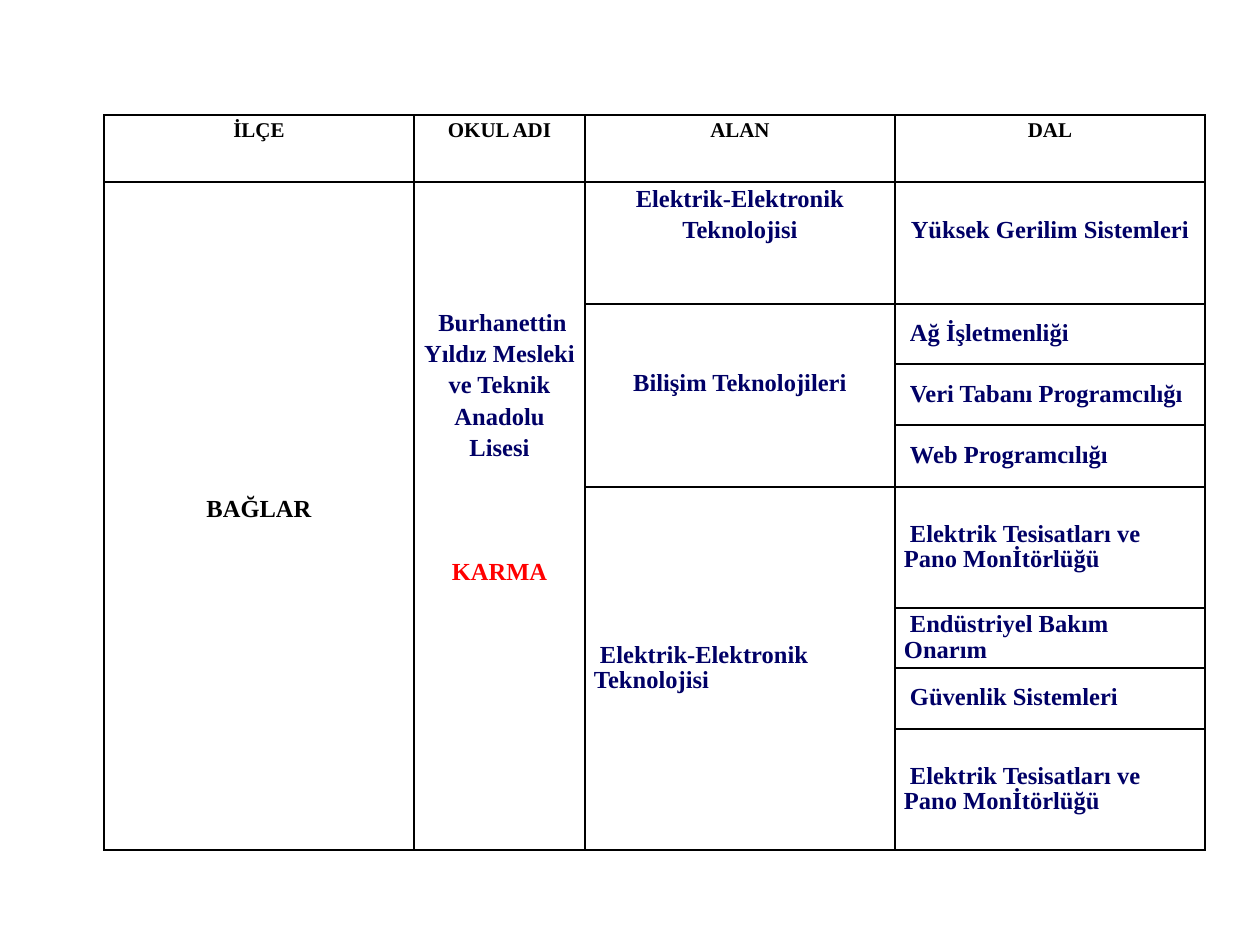
from dataclasses import dataclass

from lxml.etree import SubElement
from pptx import Presentation
from pptx.dml.color import RGBColor as RGB
from pptx.enum.text import MSO_ANCHOR as Anchor, PP_ALIGN as Align
from pptx.oxml import parse_xml
from pptx.oxml.ns import nsdecls, qn
from pptx.util import Pt

PX = 914400 / 126


def px(n):
    return round(n * PX)


@dataclass(frozen=True)
class Theme:
    font: str = "Times New Roman"
    black: str = "000000"
    navy: str = "000066"
    red: str = "FF0000"
    head_size: int = 12
    body_size: int = 14
    loose: float = 1.15
    tight: float = 14.7
    border: float = 1
    inset: int = 9
    line: int = 31
    indent: int = 6


class Deck:
    def __init__(self, theme):
        self.theme = theme
        self.prs = Presentation()
        self.prs.slide_width, self.prs.slide_height = px(1260), px(945)
        self.s = self.prs.slides.add_slide(self.prs.slide_layouts[6])

    def table(self, left, top, cols, rows):
        frame = self.s.shapes.add_table(
            len(rows), len(cols), px(left), px(top), px(sum(cols)), px(sum(rows)))
        tbl = frame.table
        tbl.first_row = tbl.horz_banding = False
        for col, w in zip(tbl.columns, cols):
            col.width = px(w)
        for row, h in zip(tbl.rows, rows):
            row.height = px(h)
        for cell in tbl.iter_cells():
            cell.fill.background()
            self.borders(cell)
        return tbl

    def borders(self, cell):
        tcPr = cell._tc.get_or_add_tcPr()
        for i, side in enumerate(("lnL", "lnR", "lnT", "lnB")):
            ln = parse_xml(f'<a:{side} {nsdecls("a")} w="{Pt(self.theme.border)}"/>')
            fill = SubElement(ln, qn("a:solidFill"))
            SubElement(fill, qn("a:srgbClr"), val=self.theme.black)
            tcPr.insert(i, ln)

    def centred(self, cell, text, color, size=None, skip=0):
        """Centre text from the top of the cell, skip lines down."""
        t = self.theme
        self.insets(cell, skip * t.line)
        cell.text_frame.text = text
        p = cell.text_frame.paragraphs[0]
        self.paragraph(p, color, size or t.body_size, t.loose, Align.CENTER)
        return p

    def listed(self, cell, text):
        """Left-aligned text in the middle of the cell, first line indented."""
        t = self.theme
        self.insets(cell)
        cell.vertical_anchor = Anchor.MIDDLE
        cell.text_frame.text = text
        p = cell.text_frame.paragraphs[0]
        self.indent(p)
        self.paragraph(p, t.navy, t.body_size, Pt(t.tight), Align.LEFT)

    def added(self, cell, text, color, skip):
        """Add a centred paragraph, skip lines below the one before."""
        t = self.theme
        p = cell.text_frame.add_paragraph()
        p.text = text
        p.space_before = px(skip * t.line)
        self.paragraph(p, color, t.body_size, t.loose, Align.CENTER)

    def insets(self, cell, top=0):
        cell.margin_left = cell.margin_right = px(self.theme.inset)
        cell.margin_top, cell.margin_bottom = px(top), 0

    def indent(self, p):
        p._p.get_or_add_pPr().set("indent", str(px(self.theme.indent)))

    def paragraph(self, p, color, size, spacing, align):
        p.alignment, p.line_spacing = align, spacing
        for r in p.runs:
            r.font.name, r.font.size, r.font.bold = self.theme.font, Pt(size), True
            r.font.color.rgb = RGB.from_string(color)


HEADINGS = ["İLÇE", "OKUL ADI", "ALAN", "DAL"]
BRANCHES = [
    "Ağ İşletmenliği", "Veri Tabanı Programcılığı", "Web Programcılığı",
    "Elektrik Tesisatları ve Pano Monİtörlüğü", "Endüstriyel Bakım Onarım",
    "Güvenlik Sistemleri", "Elektrik Tesisatları ve Pano Monİtörlüğü",
]
MERGES = [(1, 0, 8), (1, 1, 8), (2, 2, 4), (5, 2, 8)]


def main():
    t = Theme()
    deck = Deck(t)
    tbl = deck.table(104, 115, [310, 171, 310, 310],
                     [67, 122, 60, 61, 62, 121, 60, 61, 121])
    for first, col, last in MERGES:
        tbl.cell(first, col).merge(tbl.cell(last, col))

    for col, heading in enumerate(HEADINGS):
        deck.centred(tbl.cell(0, col), heading, t.black, t.head_size)

    deck.centred(tbl.cell(1, 0), "BAĞLAR", t.black, skip=10)
    school = tbl.cell(1, 1)
    name = "Burhanettin Yıldız Mesleki ve Teknik Anadolu Lisesi"
    deck.indent(deck.centred(school, name, t.navy, skip=4))
    deck.added(school, "KARMA", t.red, skip=3)

    deck.centred(tbl.cell(1, 2), "Elektrik-Elektronik Teknolojisi", t.navy)
    deck.centred(tbl.cell(2, 2), "Bilişim Teknolojileri", t.navy, skip=2)
    deck.listed(tbl.cell(5, 2), "Elektrik-Elektronik Teknolojisi")

    deck.centred(tbl.cell(1, 3), "Yüksek Gerilim Sistemleri", t.navy, skip=1)
    for row, branch in enumerate(BRANCHES, 2):
        deck.listed(tbl.cell(row, 3), branch)

    deck.prs.save("out.pptx")


if __name__ == "__main__":
    main()
